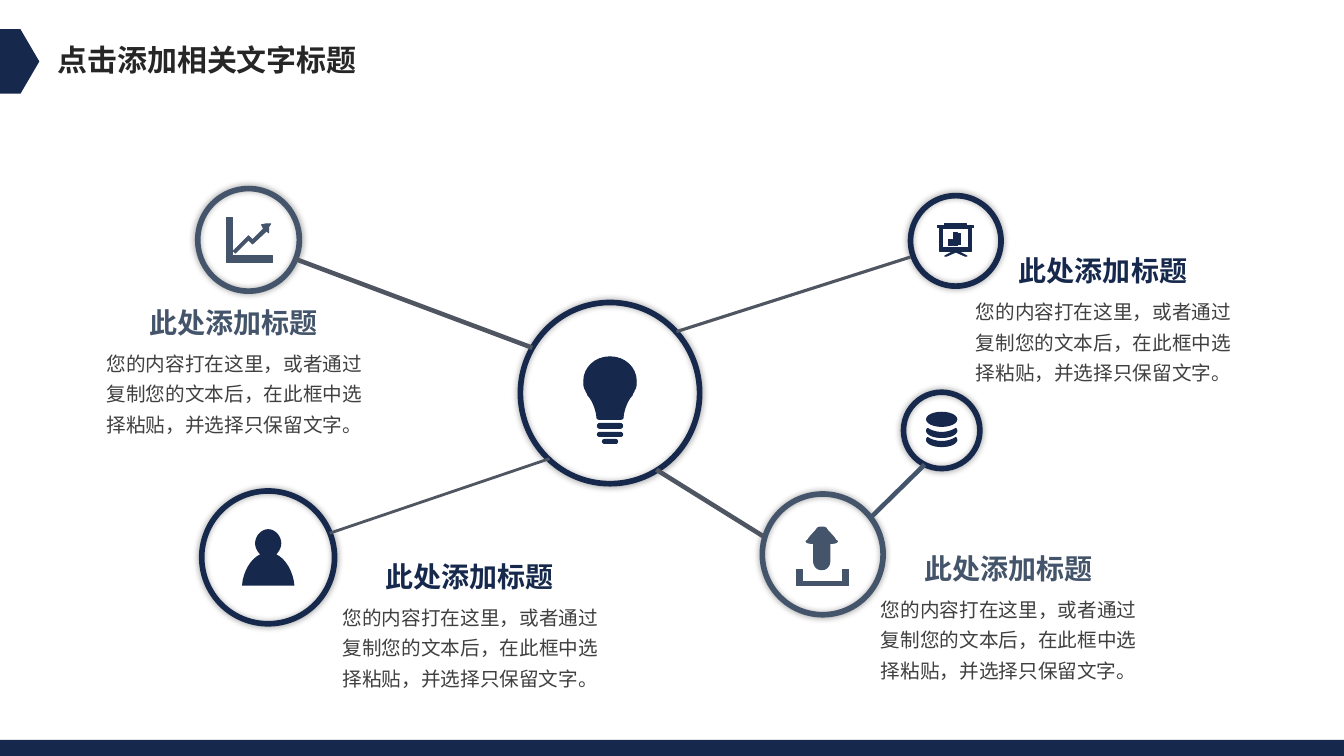
from lxml.etree import SubElement
from pptx import Presentation
from pptx.dml.color import RGBColor
from pptx.enum.shapes import MSO_CONNECTOR, MSO_SHAPE
from pptx.enum.text import MSO_ANCHOR, PP_ALIGN
from pptx.oxml.ns import qn
from pptx.util import Inches, Pt

NAVY = RGBColor(0x16, 0x29, 0x4C)
SLATE = RGBColor(0x44, 0x54, 0x6A)
STEEL = RGBColor(0x4F, 0x56, 0x61)
DARK = RGBColor(0x26, 0x26, 0x26)
GREY = RGBColor(0x40, 0x40, 0x40)
FONT = "Noto Sans CJK SC"
HEAD = "此处添加标题"
BODY = "您的内容打在这里，或者通过复制您的文本后，在此框中选择粘贴，并选择只保留文字。"

# Right halves of symmetric outlines: one point is a line, three a curve
BULB = [[(0, 0)], [(.15, 0), (.26, .11), (.26, .24)],
        [(.26, .27), (.26, .31), (.24, .33)], [(.24, .35), (.22, .36), (.22, .38)],
        [(.16, .44), (.13, .56), (.13, .6)], [(.13, .62), (.11, .62), (.09, .62)]]
USER = [[(0, 0)], [(.07, 0), (.13, .07), (.13, .14)],
        [(.13, .18), (.11, .22), (.08, .25)], [(.17, .29), (.25, .42), (.26, .56)]]
ARROW = [[(0, 0)], [(.02, 0), (.04, 0), (.05, .02)],
         [(.07, .05), (.12, .09), (.14, .13)], [(.17, .14), (.15, .16), (.1, .16)],
         [(.08, .16)], [(.08, .34)], [(.08, .38), (.05, .42), (.01, .42)]]
TRAY = [[(0, .12)], [(.2, .12)], [(.2, 0)], [(.26, 0)], [(.26, .16)], [(0, .16)]]
LEGS = [[(0, 0)], [(.02, 0)], [(.11, .05)], [(.09, .05)], [(0, .01)]]
DISC = [[(0, .04)], [(.06, .04), (.11, .02), (.14, 0)],
        [(.15, .01), (.15, .02), (.15, .03)], [(.14, .06), (.09, .09), (0, .09)]]
# Whole outlines
AXES = [(-.16, .16), (-.16, -.22), (-.22, -.22), (-.22, .22), (.24, .22), (.24, .16)]
TREND = [(0, 0), (.04, .04), (.18, -.09), (.2, -.07), (.2, -.13), (.22, -.16),
         (.18, -.16), (.13, -.15), (.15, -.11), (.04, 0), (0, -.04), (-.15, .11),
         (-.13, .13)]


def paint(shape, color, line=0.75):
    shape.shadow.inherit = False
    shape.fill.solid()
    shape.fill.fore_color.rgb = color
    if line:
        shape.line.color.rgb = color
        shape.line.width = Pt(line)
    else:
        shape.line.fill.background()
    return shape


def add(shapes, kind, box, color, line=0.75):
    return paint(shapes.add_shape(kind, *map(Inches, box)), color, line)


def trace(half, steps=8):
    """Turn a half outline into the points of the whole one."""
    pts = []
    for seg in half:
        if len(seg) == 1:
            pts.append(seg[0])
            continue
        ends = [pts[-1], *seg]
        for i in range(1, steps + 1):
            t = i / steps
            mix = ((1 - t) ** 3, 3 * t * (1 - t) ** 2, 3 * t * t * (1 - t), t ** 3)
            pts.append(tuple(sum(m * p[k] for m, p in zip(mix, ends)) for k in (0, 1)))
    return pts + [(-x, y) for x, y in reversed(pts)]


def draw(shapes, pts, x, y, color, line=0.75):
    spots = [(Inches(x + a), Inches(y + b)) for a, b in pts]
    pen = shapes.build_freeform(*spots[0])
    pen.add_line_segments(spots[1:])
    paint(pen.convert_to_shape(), color, line)


# Icons, each placed around the middle of its ring
def bulb(shapes, x, y, color):
    draw(shapes, trace(BULB), x, y - .36, color)
    for top, wide, high in ((.3, .25, .05), (.39, .25, .04), (.46, .15, .04)):
        bar = add(shapes, MSO_SHAPE.ROUNDED_RECTANGLE,
                  (x - wide / 2, y + top, wide, high), color)
        bar.adjustments[0] = .5


def board(shapes, x, y, color):
    frame = add(shapes, MSO_SHAPE.FRAME, (x - .16, y - .15, .32, .25), color)
    frame.adjustments[0] = .12
    bars = ((-.18, -.15, .36, .02), (-.11, -.17, .22, .02),
            (-.07, -.01, .04, .06), (-.02, -.08, .04, .13), (.02, -.07, .03, .11))
    for dx, dy, wide, high in bars:
        add(shapes, MSO_SHAPE.RECTANGLE, (x + dx, y + dy, wide, high), color)
    draw(shapes, trace(LEGS), x, y + .1, color)


def disks(shapes, x, y, color):
    add(shapes, MSO_SHAPE.OVAL, (x - .15, y - .18, .3, .14), color)
    for top in (-.02, .07):
        draw(shapes, trace(DISC), x, y + top, color)


def upload(shapes, x, y, color):
    draw(shapes, trace(TRAY), x, y + .15, color)
    draw(shapes, trace(ARROW), x - .01, y - .27, color)


def user(shapes, x, y, color):
    draw(shapes, trace(USER), x, y - .28, color, 0)


def chart(shapes, x, y, color):
    draw(shapes, AXES, x, y, color)
    draw(shapes, TREND, x, y, color)


def node(slide, box, icon, color):
    """A shadowed ring with an icon in its middle."""
    left, top, wide, high = box
    shapes = slide.shapes.add_group_shape().shapes
    icon(shapes, left + wide / 2, top + high / 2, color)
    ring = add(shapes, MSO_SHAPE.DONUT, box, color, 1)
    ring.adjustments[0] = .042 / min(wide, high)
    glow = SubElement(ring.element.spPr.find(qn("a:effectLst")), qn("a:outerShdw"),
                      blurRad=str(Pt(5)), dist="0", dir="0", algn="ctr", rotWithShape="0")
    black = SubElement(glow, qn("a:srgbClr"), val="000000")
    SubElement(black, qn("a:alpha"), val="40000")


def link(slide, ends, width, color):
    line = slide.shapes.add_connector(MSO_CONNECTOR.STRAIGHT, *map(Inches, ends))
    line.line.color.rgb = color
    line.line.width = Pt(width)
    SubElement(line.element.spPr, qn("a:effectLst"))


def write(shape, text, size, color, bold=False, align=PP_ALIGN.CENTER, wrap=False, space=1):
    frame = shape.text_frame
    frame.word_wrap = wrap
    para = frame.paragraphs[0]
    para.alignment = align
    para.line_spacing = space
    run = para.add_run()
    run.text = text
    looks = {"size": Pt(size), "bold": bold, "name": FONT}
    for key, val in looks.items():
        setattr(run.font, key, val)
    run.font.color.rgb = color
    SubElement(run.font._element, qn("a:ea"), typeface=FONT)


def caption(slide, left, top, color):
    """A heading centred over its paragraph."""
    text = slide.shapes.add_textbox(*map(Inches, (left, top + .39, 2.75, 1.02)))
    write(text, BODY, 14, GREY, wrap=True, space=1.3)
    head = slide.shapes.add_textbox(*map(Inches, (left + .43, top, 1.88, .44)))
    write(head, HEAD, 20, color, bold=True)


def header(slide, left, top):
    tag = add(slide.shapes, MSO_SHAPE.PENTAGON, (left, top, .39, .64), NAVY, 0)
    tag.adjustments[0] = .48
    title = slide.shapes.title
    spot = {"left": left + .47, "top": top + .07, "width": 3.2, "height": .46}
    for key, val in spot.items():
        setattr(title, key, Inches(val))
    title.text_frame.vertical_anchor = MSO_ANCHOR.TOP
    write(title, "点击添加相关文字标题", 21.4, DARK, bold=True, align=PP_ALIGN.LEFT)


def main():
    deck = Presentation()
    deck.slide_width, deck.slide_height = Inches(13.33), Inches(7.5)
    slide = deck.slides.add_slide(deck.slide_layouts[5])

    # Rings and icons
    for box, icon, color in (
            ((5.14, 2.98, 1.82, 1.84), bulb, NAVY),
            ((9.01, 1.92, .94, .94), board, NAVY),
            ((8.94, 3.87, .8, .8), disks, NAVY),
            ((7.54, 4.88, 1.24, 1.24), upload, SLATE),
            ((1.98, 4.85, 1.36, 1.36), user, NAVY),
            ((1.94, 1.85, 1.05, 1.06), chart, SLATE)):
        node(slide, box, icon, color)

    # Links between the rings
    for ends, width, color in (
            ((6.71, 3.29, 9.03, 2.55), 2.25, STEEL),
            ((6.51, 4.66, 7.57, 5.32), 3.25, STEEL),
            ((8.63, 5.14, 9.17, 4.61), 3.25, SLATE),
            ((3.27, 5.29, 5.45, 4.55), 2, STEEL),
            ((2.93, 2.57, 5.28, 3.45), 3.25, STEEL)):
        link(slide, ends, width, color)

    # Captions
    for left, top, color in ((.95, 2.98, SLATE), (9.57, 2.47, NAVY),
                             (3.29, 5.5, NAVY), (8.63, 5.42, SLATE)):
        caption(slide, left, top, color)

    # Title and footer band
    header(slide, 0, .29)
    add(slide.shapes, MSO_SHAPE.RECTANGLE, (0, 7.34, 13.33, .16), NAVY, 0)
    deck.save("out.pptx")


if __name__ == "__main__":
    main()
